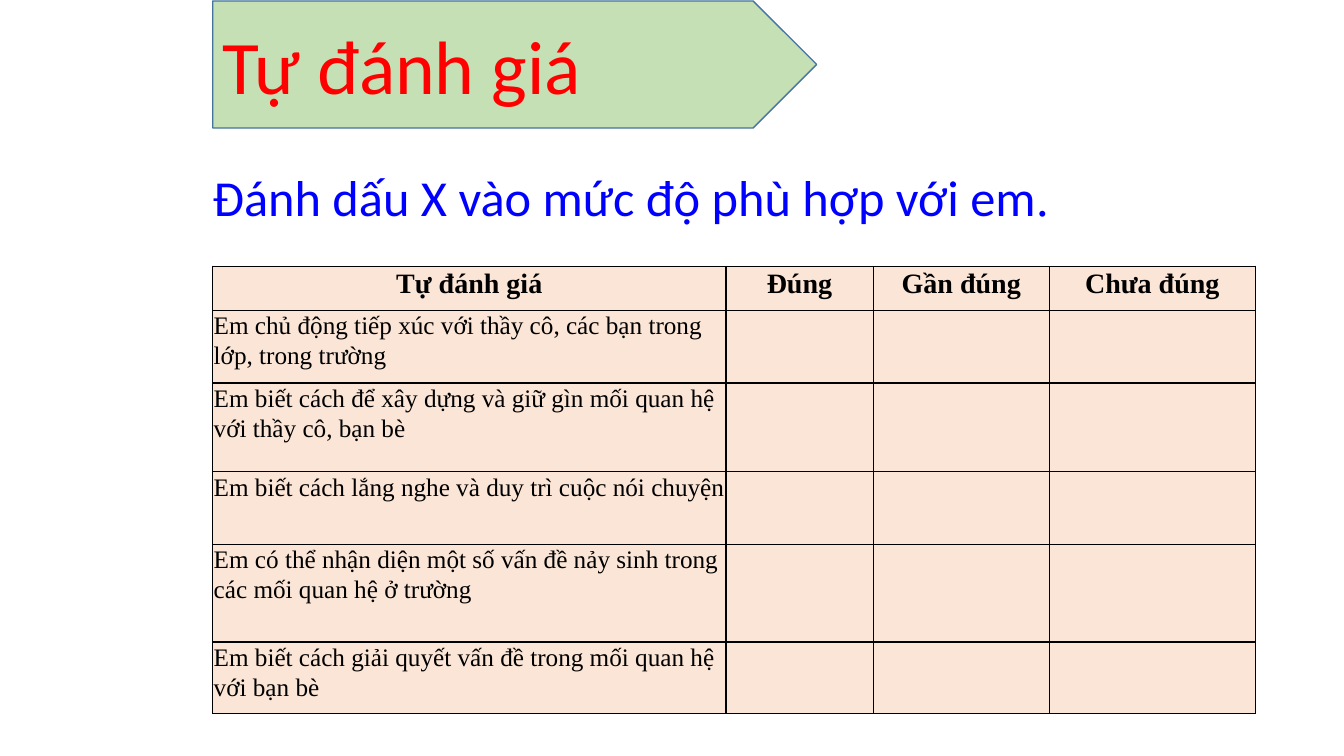
from lxml import etree
from pptx import Presentation
from pptx.dml.color import RGBColor
from pptx.enum.shapes import MSO_SHAPE
from pptx.enum.text import MSO_ANCHOR, PP_ALIGN
from pptx.oxml.ns import qn
from pptx.util import Inches, Pt

PENTAGON = MSO_SHAPE.PENTAGON
MIDDLE = MSO_ANCHOR.MIDDLE
LEFT, CENTER, JUSTIFY = PP_ALIGN.LEFT, PP_ALIGN.CENTER, PP_ALIGN.JUSTIFY

GREEN = RGBColor(0xC5, 0xE0, 0xB4)
STEEL = RGBColor(0x43, 0x73, 0x9E)
RED = RGBColor(0xFF, 0x00, 0x00)
BLUE = RGBColor(0x00, 0x00, 0xFF)
BLACK = RGBColor(0x00, 0x00, 0x00)
PEACH = RGBColor(0xFB, 0xE5, 0xD6)

SANS = "Calibri"
SERIF = "Times New Roman"

HEADINGS = ["Tự đánh giá", "Đúng", "Gần đúng", "Chưa đúng"]
STATEMENTS = [
    "Em chủ động tiếp xúc với thầy cô, các bạn trong lớp, trong trường",
    "Em biết cách để xây dựng và giữ gìn mối quan hệ với thầy cô, bạn bè",
    "Em biết cách lắng nghe và duy trì cuộc nói chuyện",
    "Em có thể nhận diện một số vấn đề nảy sinh trong các mối quan hệ ở trường",
    "Em biết cách giải quyết vấn đề trong mối quan hệ với bạn bè",
]
COLUMN_WIDTHS = [5.09, 1.46, 1.75, 2.04]
ROW_HEIGHTS = [0.44, 0.72, 0.88, 0.72, 0.97, 0.71]


def style_font(font, name, size, color, bold=False):
    font.name = name
    font.size = Pt(size)
    font.color.rgb = color
    font.bold = bold


def add_banner(page, text):
    banner = page.shapes.add_shape(
        PENTAGON, Inches(2.11), Inches(0.01), Inches(5.99), Inches(1.26)
    )
    banner.shadow.inherit = False
    banner.fill.solid()
    banner.fill.fore_color.rgb = GREEN
    banner.line.color.rgb = STEEL
    banner.line.width = Pt(1)
    frame = banner.text_frame
    frame.vertical_anchor = MIDDLE
    frame.text = text
    para = frame.paragraphs[0]
    para.alignment = LEFT
    style_font(para.runs[0].font, SANS, 54, RED)


def add_instruction(page, spans):
    box = page.shapes.add_textbox(
        Inches(2.01), Inches(1.6), Inches(11.18), Inches(0.71)
    )
    box.text_frame.word_wrap = True
    para = box.text_frame.paragraphs[0]
    para.alignment = JUSTIFY
    for text, font_name in spans:
        span = para.add_run()
        span.text = text
        style_font(span.font, font_name, 36, BLUE)


def add_borders(cell):
    properties = cell._tc.get_or_add_tcPr()
    for side in ("a:lnL", "a:lnR", "a:lnT", "a:lnB"):
        border = etree.SubElement(properties, qn(side), w=str(Pt(1)))
        fill = etree.SubElement(border, qn("a:solidFill"))
        etree.SubElement(fill, qn("a:srgbClr"), val=str(BLACK))


def style_cell(cell, text, is_heading):
    add_borders(cell)
    cell.fill.solid()
    cell.fill.fore_color.rgb = PEACH
    cell.margin_left = cell.margin_right = Inches(0.01)
    cell.margin_top = cell.margin_bottom = Inches(0)
    if text:
        cell.text_frame.text = text
        para = cell.text_frame.paragraphs[0]
        para.alignment = CENTER if is_heading else LEFT
        para.line_spacing = 1.07
        size = 20 if is_heading else 18
        style_font(para.runs[0].font, SERIF, size, BLACK, is_heading)


def add_checklist(page):
    rows = [HEADINGS] + [[text, "", "", ""] for text in STATEMENTS]
    table = page.shapes.add_table(
        len(rows), len(HEADINGS), Inches(2.11), Inches(2.64),
        Inches(sum(COLUMN_WIDTHS)), Inches(sum(ROW_HEIGHTS)),
    ).table
    for column, width in zip(table.columns, COLUMN_WIDTHS):
        column.width = Inches(width)
    for row, height, texts in zip(table.rows, ROW_HEIGHTS, rows):
        row.height = Inches(height)
        for cell, text in zip(row.cells, texts):
            style_cell(cell, text, texts is HEADINGS)


def main():
    deck = Presentation()
    deck.slide_width = Inches(13.33)
    deck.slide_height = Inches(7.5)
    page = deck.slides.add_slide(deck.slide_layouts[6])
    add_banner(page, "Tự đánh giá")
    add_instruction(
        page, [("Đánh dấu X vào mức độ phù hợp với em", SANS), (".", SERIF)]
    )
    add_checklist(page)
    deck.save("out.pptx")


if __name__ == "__main__":
    main()
